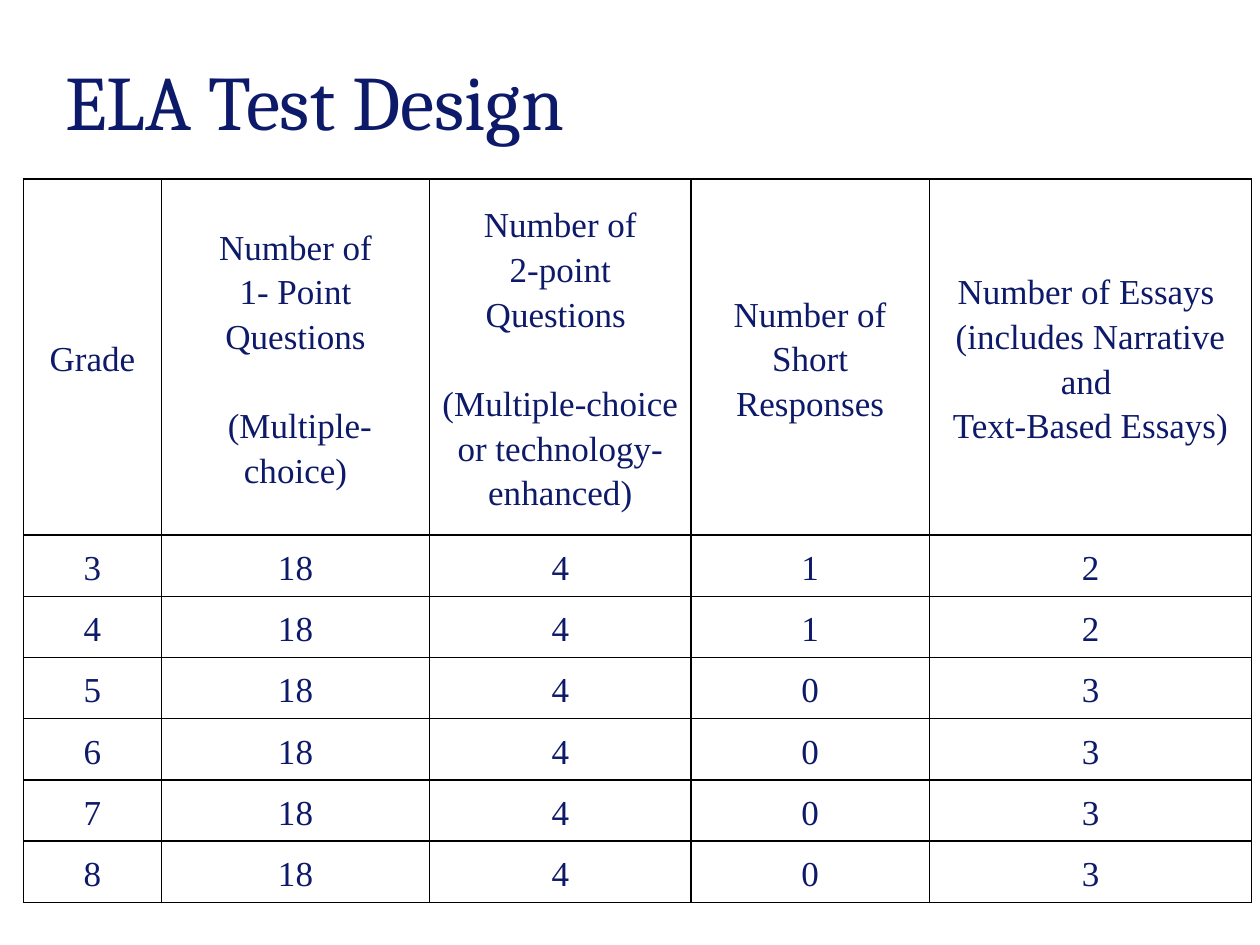
import pptx
import pptx.dml.color
import pptx.enum.text
import pptx.util
from lxml import etree
from pptx.oxml.ns import qn

Pt = pptx.util.Pt
ALIGN = pptx.enum.text.PP_ALIGN
MIDDLE = pptx.enum.text.MSO_ANCHOR.MIDDLE


def color(code):
    return pptx.dml.color.RGBColor.from_string(code)


def write(para, text, size, font, ink, align=ALIGN.LEFT, line=None, gap=0):
    para.alignment = align
    if line:
        para.line_spacing = line
    if gap:
        para.space_before = Pt(gap)
    run = para.add_run()
    run.text = text
    run.font.size = Pt(size)
    run.font.name = font
    run.font.color.rgb = color(ink)


class Deck:
    ink, paper, rule = "0D1969", "FFFFFF", "000000"
    head, body = "Cambria", "Times New Roman"

    def __init__(self, wide, high):
        self.file = pptx.Presentation()
        self.file.slide_width, self.file.slide_height = Pt(wide), Pt(high)
        self.slide = self.file.slides.add_slide(self.file.slide_layouts[6])

    def title(self, text, left, top, wide, high):
        box = self.slide.shapes.add_textbox(Pt(left), Pt(top), Pt(wide), Pt(high))
        frame = box.text_frame
        frame.word_wrap = True
        frame.vertical_anchor = MIDDLE
        write(frame.paragraphs[0], text, 44, self.head, self.ink)

    def border(self, cell):
        props = cell._tc.get_or_add_tcPr()
        for i, side in enumerate(("lnL", "lnR", "lnT", "lnB")):
            edge = etree.Element(qn("a:" + side), w=str(Pt(1)))
            fill = etree.SubElement(edge, qn("a:solidFill"))
            etree.SubElement(fill, qn("a:srgbClr"), val=self.rule)
            props.insert(i, edge)

    def cell(self, cell, lines):
        cell.fill.solid()
        cell.fill.fore_color.rgb = color(self.paper)
        self.border(cell)
        cell.vertical_anchor = MIDDLE
        cell.margin_left = cell.margin_right = Pt(5.8)
        cell.margin_top = cell.margin_bottom = Pt(2.2)
        frame = cell.text_frame
        for i, (text, gap) in enumerate(lines):
            para = frame.add_paragraph() if i else frame.paragraphs[0]
            write(para, text, 20, self.body, self.ink, ALIGN.CENTER, 1.15, gap)

    def table(self, rows, left, top, widths, heights):
        frame = self.slide.shapes.add_table(
            len(rows), len(widths), Pt(left), Pt(top),
            Pt(sum(widths)), Pt(sum(heights)))
        grid = frame.table
        grid.first_row = grid.horz_banding = False
        for col, wide in zip(grid.columns, widths):
            col.width = Pt(wide)
        for row, high, data in zip(grid.rows, heights, rows):
            row.height = Pt(high)
            for cell, lines in zip(row.cells, data):
                self.cell(cell, lines)


def main():
    deck = Deck(720, 540)

    # Title
    deck.title("ELA Test Design", 30.2, 12.2, 702, 90)

    # Column heads: each line with the space before it
    skip = 25.5
    heads = [
        [("Grade", 0)],
        [("Number of", 0), ("1- Point Questions", 0),
         (" (Multiple-choice)", skip)],
        [("Number of", 0), ("2-point Questions ", 0),
         ("(Multiple-choice or technology-enhanced)", skip)],
        [("Number of", 0), ("Short Responses", 0)],
        [("Number of Essays ", 0), ("(includes Narrative and ", 0),
         ("Text-Based Essays)", 0)],
    ]

    # Grade, 1-point, 2-point, short responses, essays
    counts = [
        (3, 18, 4, 1, 2),
        (4, 18, 4, 1, 2),
        (5, 18, 4, 0, 3),
        (6, 18, 4, 0, 3),
        (7, 18, 4, 0, 3),
        (8, 18, 4, 0, 3),
    ]
    rows = [heads] + [[[(str(n), 0)] for n in row] for row in counts]
    deck.table(rows, 13.5, 102.2, [78.7, 153.4, 149.2, 136.3, 184.2],
               [203.6] + [35] * len(counts))

    deck.file.save("out.pptx")


if __name__ == "__main__":
    main()
